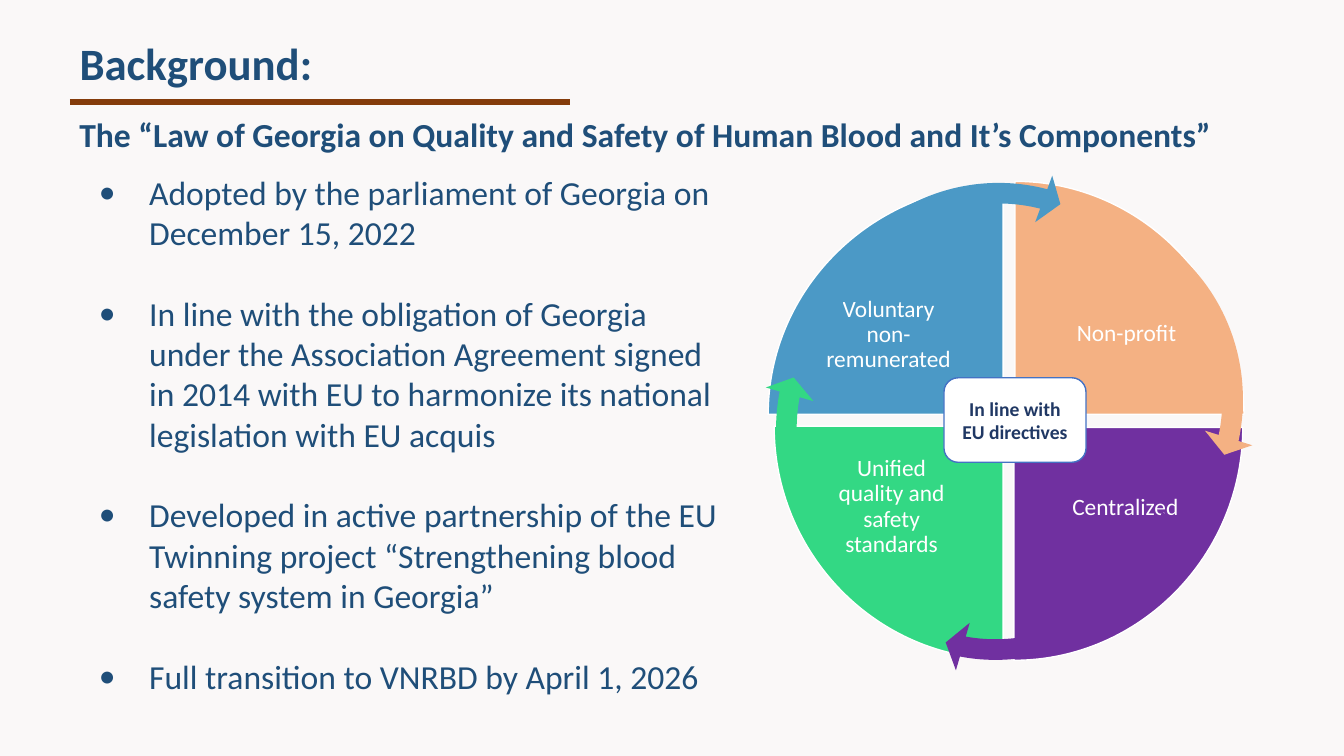
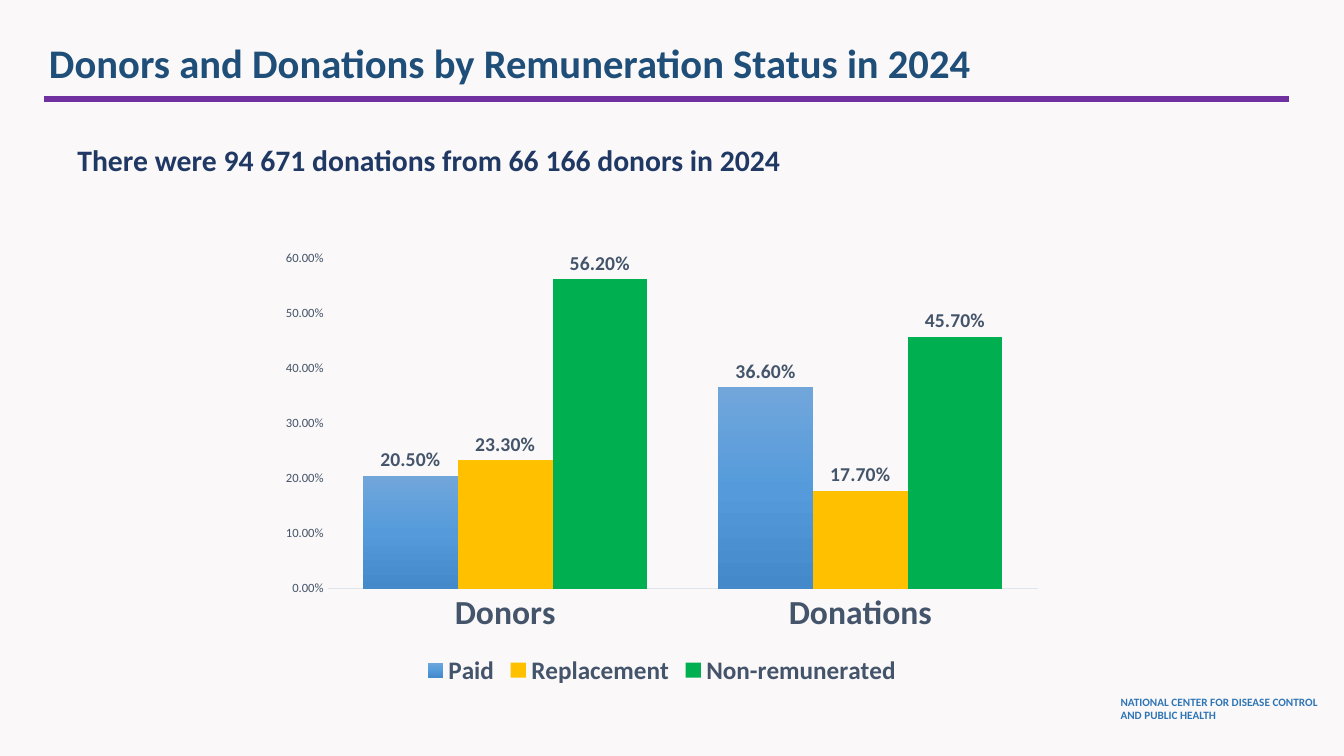
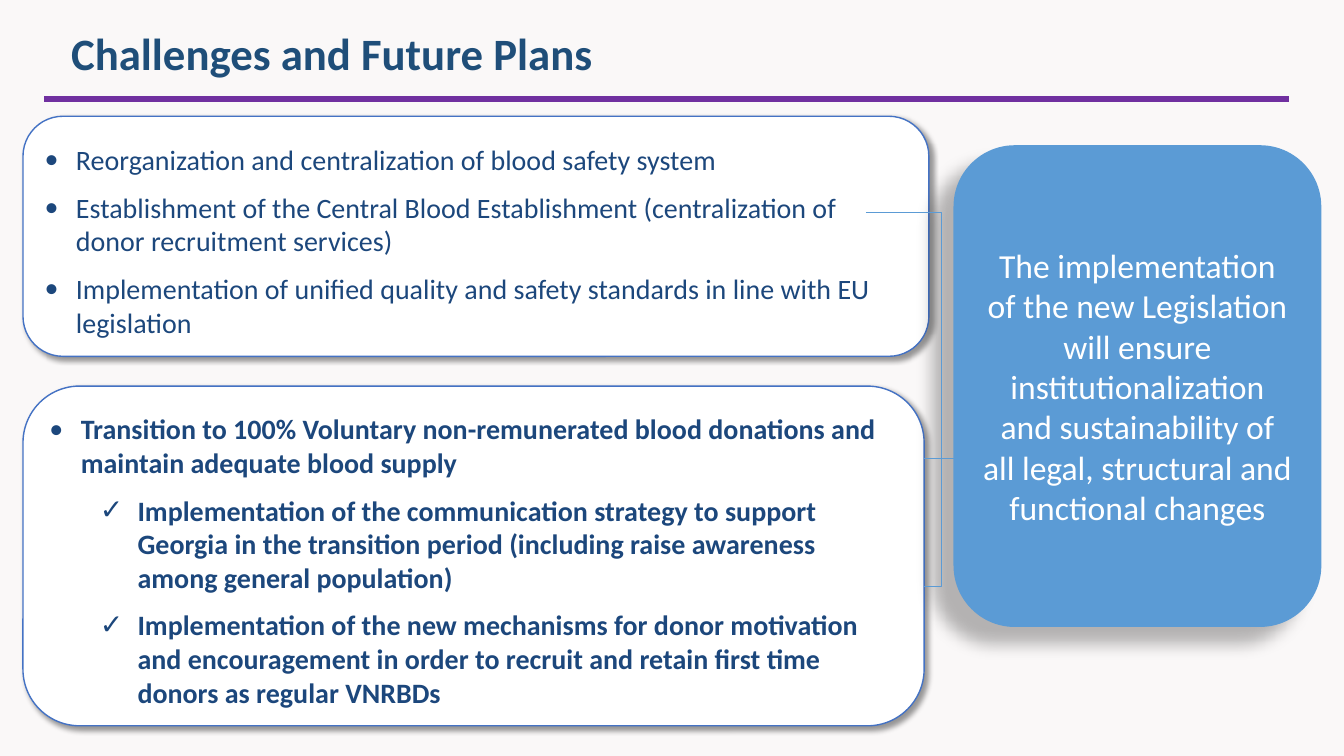
import copy

import pptx
import pptx.chart.data
import pptx.dml.color
import pptx.enum.chart
import pptx.enum.shapes
import pptx.enum.text
import pptx.oxml.ns
import pptx.util
from lxml import etree

Cm, Pt = pptx.util.Cm, pptx.util.Pt
qn = pptx.oxml.ns.qn
rgb = pptx.dml.color.RGBColor.from_string
SHAPE = pptx.enum.shapes.MSO_SHAPE
CONNECTOR = pptx.enum.shapes.MSO_CONNECTOR
ALIGN = pptx.enum.text.PP_ALIGN
ANCHOR = pptx.enum.text.MSO_ANCHOR


class Theme:
    font = "Calibri"
    background, white = "FAF8F8", "FFFFFF"
    blue, navy, ink, slate = "1F4E79", "203864", "1C477C", "44546A"
    outline, panel, footer = "4472C4", "5B9BD5", "2E75B6"
    purple, brown, orange = "7030A0", "843C0B", "F4B183"
    green, sky, axis = "33D884", "4B99C6", "E0E5EB"
    paid = [(0, "71A6DB"), (0.5, "559BDB"), (1, "448ACA")]
    replacement, unpaid = "FFC000", "00B050"
    title, long_title, body, card, lead = 32, 29, 24, 20, 21.2
    label, centre, small = 16.7, 14, 8
    legend, value, tick = 18, 14, 9


def write(frame, text, size, colour, bold=False, align=ALIGN.LEFT, anchor=ANCHOR.TOP,
          spacing=1.0, before=0, bullet=None, indent=0, hang=0):
    """Add one formatted paragraph to a text frame."""
    paragraph = frame.add_paragraph() if frame.text else frame.paragraphs[0]
    frame.word_wrap = True
    frame.auto_size = pptx.enum.text.MSO_AUTO_SIZE.NONE
    frame.vertical_anchor = anchor
    paragraph.alignment = align
    paragraph.line_spacing = spacing
    paragraph.space_before = Pt(before)
    run = paragraph.add_run()
    run.text = text
    run.font.name, run.font.size, run.font.bold = Theme.font, Pt(size), bold
    run.font.color.rgb = rgb(colour)
    if bullet:
        properties = paragraph._p.get_or_add_pPr()
        properties.set("marL", str(Cm(indent)))
        properties.set("indent", str(-Cm(hang)))
        etree.SubElement(properties, qn("a:buFont"), typeface=Theme.font)
        etree.SubElement(properties, qn("a:buChar"), char=bullet)


def paint(item, fill=None, line=None, width=1, shadow=None):
    """Set fill, line and shadow (opacity %, blur, distance, angle)."""
    if fill:
        item.fill.solid()
        item.fill.fore_color.rgb = rgb(fill)
    if line:
        item.line.color.rgb = rgb(line)
        item.line.width = Pt(width)
    else:
        item.line.fill.background()
    effects = etree.SubElement(item._element.spPr, qn("a:effectLst"))
    if shadow:
        opacity, blur, distance, angle = shadow
        outer = etree.SubElement(effects, qn("a:outerShdw"), blurRad=str(Pt(blur)),
                                 dist=str(Pt(distance)), dir=str(angle * 60000),
                                 algn="ctr", rotWithShape="0")
        black = etree.SubElement(outer, qn("a:srgbClr"), val="000000")
        etree.SubElement(black, qn("a:alpha"), val=str(opacity * 1000))


deck = pptx.Presentation()
deck.slide_width, deck.slide_height = Cm(33.87), Cm(19.05)
deck.slide_master.background.fill.solid()
deck.slide_master.background.fill.fore_color.rgb = rgb(Theme.background)

# Titles and the rules beneath them
wide_rule = (1.12, 32.49, 2.49, Theme.purple)
headings = [
    ("Background:", Theme.title, (1.75, 0.86, 23, 1.63), (1.76, 14.36, 2.57, Theme.brown)),
    ("Donors and Donations by Remuneration Status in 2024", Theme.long_title,
     (0.98, 0.64, 29.8, 2.03), wide_rule),
    ("Challenges and Future Plans", Theme.title, (1.54, 0.3, 28.8, 2.21), wide_rule),
]
slides = []
for heading, size, place, (start, end, height, colour) in headings:
    slide = deck.slides.add_slide(deck.slide_layouts[5])
    title = slide.shapes.title
    title.left, title.top, title.width, title.height = map(Cm, place)
    write(title.text_frame, heading, size, Theme.blue, bold=True,
          anchor=ANCHOR.MIDDLE, spacing=0.9)
    rule = slide.shapes.add_connector(CONNECTOR.STRAIGHT, Cm(start), Cm(height),
                                      Cm(end), Cm(height))
    paint(rule, line=colour, width=4.5)
    slides.append(slide)
background, donations, plans = slides

# Background: law and its key facts
law = background.shapes.add_textbox(Cm(1.75), Cm(2.74), Cm(30.25), Cm(1.27))
write(law.text_frame, "The “Law of Georgia on Quality and Safety of Human Blood and It’s Components”",
      Theme.body, Theme.blue, bold=True)
facts = background.shapes.add_textbox(Cm(2.24), Cm(4.2), Cm(16.2), Cm(14.4))
for number, fact in enumerate([
    "Adopted by the parliament of Georgia on December 15, 2022",
    "In line with the obligation of Georgia under the Association Agreement signed in 2014 "
    "with EU to harmonize its national legislation with EU acquis",
    "Developed in active partnership of the EU Twinning project “Strengthening blood safety "
    "system in Georgia”",
    "Full transition to VNRBD by April 1, 2026",
]):
    write(facts.text_frame, fact, Theme.body, Theme.blue, before=28.8 if number else 0,
          bullet="•", indent=1.27, hang=1.27)

# Background: four quadrants, each drawn from its inner corner
quadrants = [
    ("Non-profit", Theme.orange, 25.58, 10.44, 5.77, 5.87, 1, -1),
    ("Centralized", Theme.purple, 25.55, 10.77, 5.77, 5.87, 1, 1),
    ("Unified quality and safety standards", Theme.green, 25.28, 10.74, 5.77, 5.87, -1, 1),
    ("Voluntary non-remunerated", Theme.sky, 25.28, 10.44, 5.92, 5.79, -1, -1),
]
arc = [(0, 1), (0.55, 1), (1, 0.55), (1, 0)]
for label, colour, x, y, radius_x, radius_y, side_x, side_y in quadrants:
    outline = background.shapes.build_freeform(Cm(x), Cm(y))
    outline.add_line_segments([(Cm(x + side_x * radius_x * across),
                                Cm(y + side_y * radius_y * down)) for across, down in arc],
                              close=True)
    quadrant = outline.convert_to_shape()
    # Turn the last three points into one Bézier curve
    handles = quadrant._element.findall(".//" + qn("a:lnTo"))[1:]
    curve = etree.Element(qn("a:cubicBezTo"))
    handles[0].addprevious(curve)
    for handle in handles:
        curve.append(handle[0])
        handle.getparent().remove(handle)
    paint(quadrant, colour, Theme.white)
    frame = quadrant.text_frame
    frame.margin_left, frame.margin_right = [Cm(m) for m in (1.22, 1.37)[::side_x]]
    frame.margin_top, frame.margin_bottom = [Cm(m) for m in (0.97, 2.77)[::side_y]]
    write(frame, label, Theme.label, Theme.white, align=ALIGN.CENTER,
          anchor=ANCHOR.MIDDLE, spacing=0.9)

# Background: arrows that lead from one quadrant to the next
arrows = [
    (Theme.orange, 21.29, 4.83, 10.57, 17.1, 162),
    (Theme.purple, 19.94, 6.43, 10.57, 16.2, 0),
    (Theme.green, 19.2, 5.49, 10.57, 16, 54),
    (Theme.sky, 19.94, 4.24, 10.49, 20.1, 108),
]
for colour, left, top, height, rotation, tail in arrows:
    arrow = background.shapes.add_shape(SHAPE.CIRCULAR_ARROW, Cm(left), Cm(top),
                                        Cm(10.39), Cm(height))
    arrow.rotation = rotation
    for index, value in enumerate((0.05, 3.28, tail + 50.73, tail, 0.06)):
        arrow.adjustments[index] = value
    paint(arrow, colour)

directives = background.shapes.add_shape(SHAPE.ROUNDED_RECTANGLE, Cm(23.79), Cm(9.52),
                                         Cm(3.58), Cm(2.13))
paint(directives, Theme.white, Theme.outline)
write(directives.text_frame, "In line with EU directives", Theme.centre, Theme.navy, bold=True,
      align=ALIGN.CENTER, anchor=ANCHOR.MIDDLE)

# Donations: lead sentence and footer
lead = donations.shapes.add_textbox(Cm(1.75), Cm(3.48), Cm(29.03), Cm(3.78))
write(lead.text_frame, "There were 94 671 donations from 66 166 donors in 2024",
      Theme.lead, Theme.navy, bold=True)
lead.text_frame.margin_left, lead.text_frame.margin_top = Cm(0.2), Cm(0.1)
footer = donations.shapes.add_textbox(Cm(27.99), Cm(17.39), Cm(5.69), Cm(0.99))
write(footer.text_frame, "NATIONAL CENTER FOR DISEASE CONTROL AND PUBLIC HEALTH",
      Theme.small, Theme.footer, bold=True)

# Donations: chart
shares = pptx.chart.data.CategoryChartData(number_format="0.00%")
shares.categories = ["Donors", "Donations"]
shares.add_series("Paid", (0.205, 0.366))
shares.add_series("Replacement", (0.233, 0.177))
shares.add_series("Non-remunerated", (0.562, 0.457))
chart = donations.shapes.add_chart(
    pptx.enum.chart.XL_CHART_TYPE.COLUMN_CLUSTERED,
    Cm(6.81), Cm(6.1), Cm(19.74), Cm(11.3), shares).chart
chart.has_title = False
chart.has_legend = True
chart.legend.position = pptx.enum.chart.XL_LEGEND_POSITION.BOTTOM
chart.legend.include_in_layout = False

columns = chart.plots[0]
columns.gap_width, columns.overlap, columns.vary_by_categories = 75, 0, False
columns.has_data_labels = True
labels = columns.data_labels
labels.show_value = True
labels.number_format, labels.number_format_is_linked = "0.00%", False
labels.position = pptx.enum.chart.XL_LABEL_POSITION.OUTSIDE_END

category_axis, value_axis = chart.category_axis, chart.value_axis
for axis in (category_axis, value_axis):
    axis.major_tick_mark = axis.minor_tick_mark = pptx.enum.chart.XL_TICK_MARK.NONE
    axis.has_major_gridlines = False
category_axis.format.line.color.rgb = rgb(Theme.axis)
category_axis.format.line.width = Pt(0.75)
value_axis.format.line.fill.background()
value_axis.minimum_scale, value_axis.maximum_scale, value_axis.major_unit = 0, 0.6, 0.1
value_axis.tick_labels.number_format = "0.00%"
value_axis.tick_labels.number_format_is_linked = False

for part, size, bold in [(category_axis.tick_labels, Theme.body, True),
                         (value_axis.tick_labels, Theme.tick, False),
                         (chart.legend, Theme.legend, True),
                         (labels, Theme.value, True)]:
    part.font.name, part.font.size, part.font.bold = Theme.font, Pt(size), bold
    part.font.color.rgb = rgb(Theme.slate)

paid, replacement, unpaid = columns.series
for series, colour in [(replacement, Theme.replacement), (unpaid, Theme.unpaid)]:
    series.format.fill.solid()
    series.format.fill.fore_color.rgb = rgb(colour)
paid_fill = paid.format.fill
paid_fill.gradient()
paid_fill.gradient_angle = 270
stop_list = paid._element.find(".//" + qn("a:gsLst"))
stop_list.append(copy.deepcopy(stop_list[0]))
for stop, (position, colour) in zip(paid_fill.gradient_stops, Theme.paid):
    stop.position = position
    stop.color.rgb = rgb(colour)

# Plans: two cards of bulleted plans (text, bullet, indent, hang)
cards = [
    ((0.58, 2.93, 22.83, 6.05), 0.37, False, [
        ("Reorganization and centralization of blood safety system", "•", 0.79, 0.79),
        ("Establishment of the Central Blood Establishment (centralization of donor "
         "recruitment services)", "•", 0.79, 0.79),
        ("Implementation of unified quality and safety standards in line with EU legislation",
         "•", 0.79, 0.79),
    ]),
    ((0.58, 9.73, 22.71, 8.56), 0.23, True, [
        ("Transition to 100% Voluntary non-remunerated blood donations and maintain adequate "
         "blood supply", "•", 0.79, 0.79),
        ("Implementation of the communication strategy to support Georgia in the transition "
         "period (including raise awareness among general population)", "✓", 2.22, 0.95),
        ("Implementation of the new mechanisms for donor motivation and encouragement in order "
         "to recruit and retain first time donors as regular VNRBDs", "✓", 2.22, 0.95),
    ]),
]
for place, margin, bold, items in cards:
    card = plans.shapes.add_shape(SHAPE.ROUNDED_RECTANGLE, *map(Cm, place))
    paint(card, Theme.white, Theme.outline, shadow=(40, 4, 3, 45))
    card.text_frame.margin_top, card.text_frame.margin_bottom = Cm(margin), 0
    for number, (text, bullet, indent, hang) in enumerate(items):
        write(card.text_frame, text, Theme.card, Theme.ink, bold=bold,
              before=10 if number else 0, bullet=bullet, indent=indent, hang=hang)

# Plans: expected result and its links to the cards
result = plans.shapes.add_shape(SHAPE.ROUNDED_RECTANGLE, Cm(24.03), Cm(3.66),
                                Cm(9.27), Cm(12.14))
paint(result, Theme.panel, shadow=(28, 11.8, 19.7, 141))
result.text_frame.margin_left = result.text_frame.margin_right = Cm(0.28)
write(result.text_frame,
      "The implementation of the new Legislation will ensure institutionalization and "
      "sustainability of all legal, structural and functional changes",
      Theme.body, Theme.white, align=ALIGN.CENTER, anchor=ANCHOR.MIDDLE)

bracket = plans.shapes.add_connector(CONNECTOR.ELBOW, Cm(21.82), Cm(5.36), Cm(23.29), Cm(14.78))
bend = bracket._element.spPr.find(".//" + qn("a:avLst"))
etree.SubElement(bend, qn("a:gd"), name="adj1", fmla="val 130000")
link = plans.shapes.add_connector(CONNECTOR.STRAIGHT, Cm(23.29), Cm(11.54), Cm(24.03), Cm(11.54))
for connection in (bracket, link):
    paint(connection, line=Theme.panel, width=0.5)

deck.save("out.pptx")
